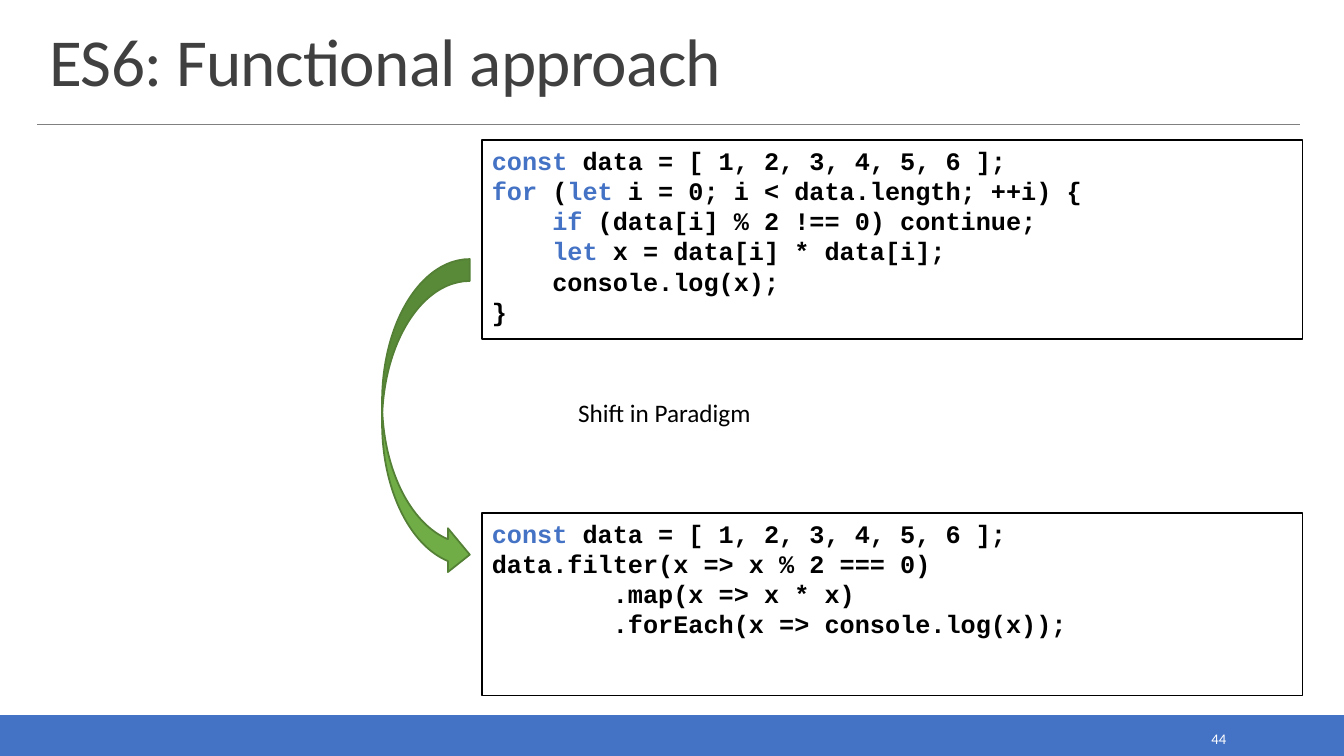
from pptx import Presentation
from pptx import util as u
from pptx.dml.color import RGBColor
from pptx.enum import shapes, text
from pptx.oxml import ns
from lxml import etree

COLOURS = {
    "accent": "4472C4",
    "rule": "808080",
    "title": "404040",
    "code": "000000",
    "paper": "FFFFFF",
    "arrow": "70AD47",
    "arrow_edge": "538035",
}
KEYWORDS = {"const", "for", "let", "if"}
CODE_LEFT, CODE_WIDTH = 4.78, 8.14
INDENT_STEP = 0.6

LOOP_CODE = [
    (0, ["const", " data = [ 1, 2, 3, 4, 5, 6 ];"]),
    (0, ["for", " (", "let", " i = 0; i < data.length; ++i) {"]),
    (1, ["if", " (data[i] % 2 !== 0) continue;"]),
    (1, ["let", " x = data[i] * data[i];"]),
    (1, ["console.log(x);"]),
    (0, ["}"]),
]
FUNCTIONAL_CODE = [
    (0, ["const", " data = [ 1, 2, 3, 4, 5, 6 ];"]),
    (0, ["data.filter(x => x % 2 === 0)"]),
    (2, [".map(x => x * x)"]),
    (2, [".forEach(x => console.log(x));"]),
]


def colour(name):
    return RGBColor.from_string(COLOURS[name])


def inches(*lengths):
    return [u.Inches(length) for length in lengths]


def set_values(target, values):
    for name, value in values.items():
        setattr(target, name, value)


def add_run(paragraph, wording, colour_name, **font_values):
    run = paragraph.add_run()
    run.text = wording
    set_values(run.font, font_values)
    run.font.color.rgb = colour(colour_name)
    return run


def add_box(slide, kind, place, fill, line):
    shape = slide.shapes.add_shape(kind, *inches(*place))
    shape.shadow.inherit = False
    if fill:
        shape.fill.solid()
        shape.fill.fore_color.rgb = colour(fill)
    else:
        shape.fill.background()
    shape.line.color.rgb = colour(line)
    shape.line.width = u.Pt(1.25)
    return shape


def add_rule(slide, left, right, top):
    rule = slide.shapes.add_connector(
        shapes.MSO_CONNECTOR.STRAIGHT, *inches(left, top, right, top))
    rule.line.color.rgb = colour("rule")
    rule.line.width = u.Pt(0.5)
    etree.SubElement(rule.element.spPr, ns.qn("a:effectLst"))


def add_label(slide, place, wording, size, colour_name, alignment, anchor):
    label = slide.shapes.add_textbox(*inches(*place))
    set_values(label.text_frame, {"word_wrap": True, "vertical_anchor": anchor})
    paragraph = label.text_frame.paragraphs[0]
    paragraph.alignment = alignment
    add_run(paragraph, wording, colour_name, size=u.Pt(size), name="Calibri")


def add_code(slide, top, height, lines):
    box = add_box(slide, shapes.MSO_SHAPE.RECTANGLE,
                  (CODE_LEFT, top, CODE_WIDTH, height), None, "code")
    frame = box.text_frame
    set_values(frame, {"word_wrap": True, "vertical_anchor": text.MSO_ANCHOR.TOP})
    for number, (level, pieces) in enumerate(lines):
        paragraph = frame.add_paragraph() if number else frame.paragraphs[0]
        paragraph.alignment = text.PP_ALIGN.LEFT
        if level:
            margin = u.Inches(level * INDENT_STEP)
            paragraph._p.get_or_add_pPr().set("marL", str(margin))
        for piece in pieces:
            add_run(paragraph, piece, "accent" if piece in KEYWORDS else "code",
                    size=u.Pt(18), name="Courier New", bold=True)


def fill_title(slide, wording):
    title = slide.shapes.title
    left, top, width, height = inches(0.39, 0.2, 12.52, 0.84)
    set_values(title, {"left": left, "top": top, "width": width, "height": height})
    set_values(title.text_frame, {
        "word_wrap": True,
        "auto_size": text.MSO_AUTO_SIZE.NONE,
        "vertical_anchor": text.MSO_ANCHOR.BOTTOM,
    })
    paragraph = title.text_frame.paragraphs[0]
    set_values(paragraph, {"alignment": text.PP_ALIGN.LEFT, "line_spacing": 0.85})
    run = add_run(paragraph, wording, "title", size=u.Pt(48), name="Calibri")
    run.font._element.set("spc", "-50")


def add_shift_arrow(slide):
    arrow = add_box(slide, shapes.MSO_SHAPE.CURVED_LEFT_ARROW,
                    (3.79, 2.57, 0.87, 3.15), "arrow", "arrow_edge")
    arrow.element.spPr.find(ns.qn("a:xfrm")).set("flipH", "1")


def main():
    presentation = Presentation()
    set_values(presentation, {"slide_width": u.Inches(13.33),
                              "slide_height": u.Inches(7.5)})
    slide = presentation.slides.add_slide(presentation.slide_layouts[5])
    add_box(slide, shapes.MSO_SHAPE.RECTANGLE, (0, 7.1, 13.33, 0.4),
            "accent", "accent")
    add_rule(slide, 0.37, 12.89, 1.23)
    fill_title(slide, "ES6: Functional approach")
    add_label(slide, (10.83, 7.19, 1.43, 0.28), "44", 10.5, "paper",
              text.PP_ALIGN.RIGHT, text.MSO_ANCHOR.MIDDLE)
    add_code(slide, 1.39, 1.97, LOOP_CODE)
    add_code(slide, 5.09, 1.81, FUNCTIONAL_CODE)
    add_shift_arrow(slide)
    add_label(slide, (CODE_LEFT, 3.89, 3.62, 0.4), "Shift in Paradigm", 18, "code",
              text.PP_ALIGN.CENTER, text.MSO_ANCHOR.TOP)
    presentation.save("out.pptx")


if __name__ == "__main__":
    main()
